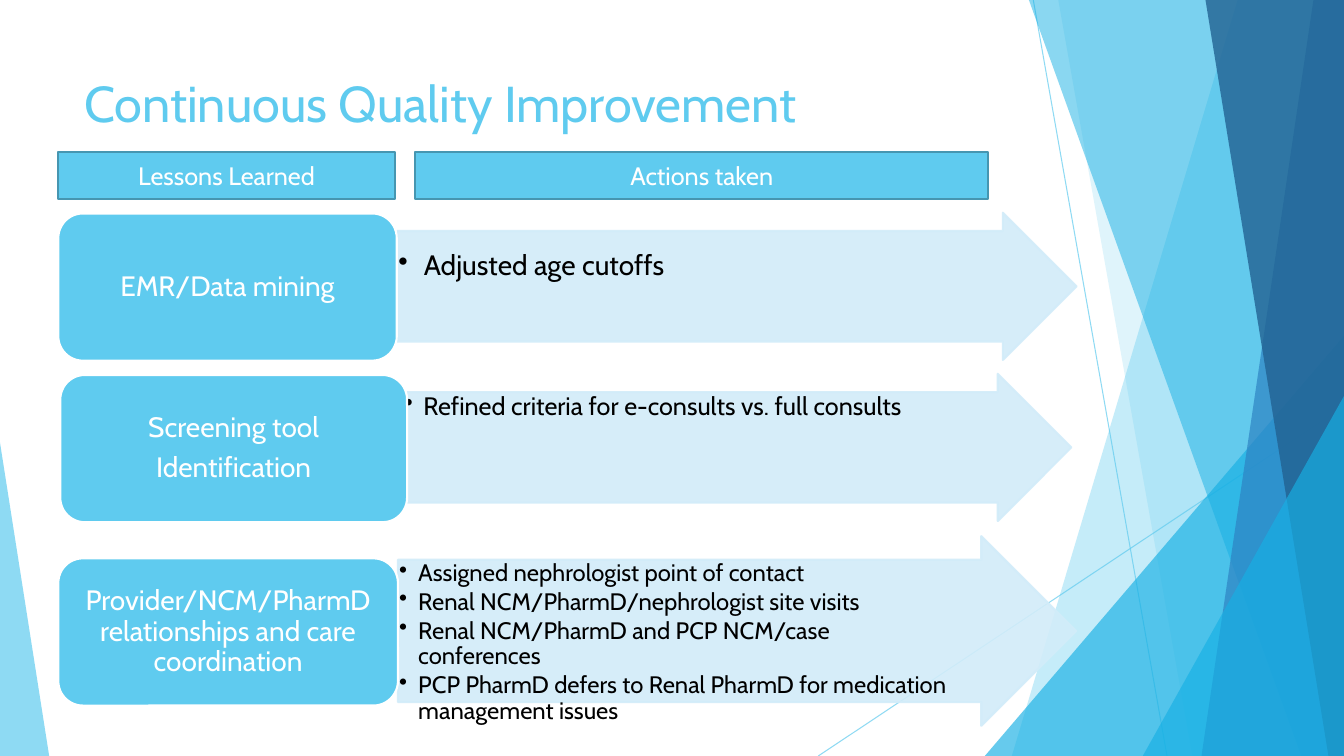
from lxml.etree import SubElement
from pptx import Presentation
from pptx.dml.color import RGBColor
from pptx.enum.shapes import MSO_CONNECTOR, MSO_SHAPE
from pptx.enum.text import MSO_ANCHOR, PP_ALIGN
from pptx.oxml.ns import qn
from pptx.util import Cm, Pt

HUES = {
    "sky": "5FCBEF", "cyan": "17B0E4", "blue": "2E83C3", "navy": "226292",
    "pale": "D2ECF9", "edge": "4696B1", "white": "FFFFFF", "black": "000000",
}
WIDE, HIGH = 33.87, 19.05


def paint(shape, fill, line=None, alpha=100):
    """Set fill, outline and opacity (percent), without a shadow."""
    shape.shadow.inherit = False
    shape.fill.solid()
    shape.fill.fore_color.rgb = RGBColor.from_string(HUES[fill])
    if line:
        shape.line.color.rgb = RGBColor.from_string(HUES[line])
        shape.line.width = Pt(1.5)
    else:
        shape.line.fill.background()
    if alpha < 100:
        for hue in shape._element.iter(qn("a:srgbClr")):
            SubElement(hue, qn("a:alpha"), val=str(alpha * 1000))


def write(shape, text, size, hue, align, anchor, pads, after=None):
    """Fill the shape with text; pads are left, top, right, bottom in cm."""
    frame = shape.text_frame
    frame.word_wrap = True
    frame.vertical_anchor = anchor
    frame.margin_left, frame.margin_top, frame.margin_right, frame.margin_bottom = map(Cm, pads)
    frame.text = text
    for para in frame.paragraphs:
        para.alignment = align
        if after is not None:
            para.line_spacing = 0.9
            para.space_after = Pt(after * size)
        for run in para.runs:
            run.font.name = "Cabin"
            run.font.size = Pt(size)
            run.font.color.rgb = RGBColor.from_string(HUES[hue])


deck = Presentation()
deck.slide_width, deck.slide_height = Cm(WIDE), Cm(HIGH)
slide = deck.slides.add_slide(deck.slide_layouts[6])
shapes = slide.shapes

# Thin rays behind the facets
for ends in [(26.04, 0, 29.41, HIGH), (WIDE, 10.24, 20.62, HIGH)]:
    ray = shapes.add_connector(MSO_CONNECTOR.STRAIGHT, *map(Cm, ends))
    ray.line.color.rgb = RGBColor.from_string(HUES["sky"])
    ray.line.width = Pt(0.75)
    for hue in ray._element.iter(qn("a:srgbClr")):
        SubElement(hue, qn("a:alpha"), val="70000")
    SubElement(ray._element.spPr, qn("a:effectLst"))

# Facets reach the right edge: a panel has top x and foot x, a wedge left x and top y
facets = [
    ("panel", 31.19, 25.5, "sky", 36),
    ("panel", 26.67, 30.05, "sky", 20),
    ("wedge", 24.82, 8.46, "cyan", 66),
    ("panel", 25.93, 32.79, "cyan", 50),
    ("panel", 33.1, 30.28, "blue", 70),
    ("panel", 30.38, 33.48, "navy", 80),
    ("wedge", 28.8, 9.98, "cyan", 66),
]
for kind, start, end, hue, alpha in facets:
    if kind == "panel":
        pen = shapes.build_freeform(Cm(start), 0)
        corners = [(WIDE, 0), (WIDE, HIGH), (end, HIGH)]
        pen.add_line_segments([(Cm(x), Cm(y)) for x, y in corners], close=True)
        facet = pen.convert_to_shape()
    else:
        facet = shapes.add_shape(MSO_SHAPE.ISOSCELES_TRIANGLE, Cm(start), Cm(end),
                                 Cm(WIDE - start), Cm(HIGH - end))
        facet.adjustments[0] = 1
    paint(facet, hue, alpha=alpha)

corner = shapes.add_shape(MSO_SHAPE.ISOSCELES_TRIANGLE, 0, Cm(11.15), Cm(1.24), Cm(7.9))
corner.adjustments[0] = 0
paint(corner, "sky", alpha=70)

title = shapes.add_textbox(Cm(1.88), Cm(1.7), Cm(23.88), Cm(3.66))
write(title, "Continuous Quality Improvement", 36, "sky", PP_ALIGN.LEFT,
      MSO_ANCHOR.TOP, (0.25, 0.13, 0.25, 0.13))

# Each row: lesson, its box (left, top, width), actions, their arrow
# (left, top, width, height), text size, bullet indent, top pad
rows = [
    ("EMR/Data mining", (1.47, 5.38, 8.53),
     ["Adjusted age cutoffs"], (10.01, 5.36, 17.12, 3.71), 20, 0.64, 0.5),
    ("Screening tool\nIdentification", (1.52, 9.45, 8.74),
     ["Refined criteria for e-consults vs. full consults"],
     (10.16, 9.42, 16.84, 3.71), 18, 0.48, 0.03),
    ("Provider/NCM/PharmD relationships and care coordination", (1.47, 14.07, 8.56),
     ["Assigned nephrologist point of contact",
      "Renal NCM/PharmD/nephrologist site visits",
      "Renal NCM/PharmD and PCP NCM/case conferences",
      "PCP PharmD defers to Renal PharmD for medication management issues"],
     (10.03, 13.51, 17.09, 4.78), 17, 0.48, 0.03),
]
for lesson, place, actions, span, size, hang, pad in rows:
    arrow = shapes.add_shape(MSO_SHAPE.RIGHT_ARROW, *map(Cm, span))
    arrow.adjustments[0], arrow.adjustments[1] = 0.75, 0.5
    paint(arrow, "pale", "pale", 90)
    write(arrow, "\n".join(actions), size, "black", PP_ALIGN.LEFT,
          MSO_ANCHOR.TOP, (0.03, pad, span[3] / 4, 0.03), 0.13)
    for para in arrow.text_frame.paragraphs:
        props = para._p.get_or_add_pPr()
        props.set("marL", str(Cm(hang)))
        props.set("indent", str(-Cm(hang)))
        SubElement(props, qn("a:buChar"), char="•")

    box = shapes.add_shape(MSO_SHAPE.ROUNDED_RECTANGLE, *map(Cm, place), Cm(3.71))
    paint(box, "sky", "white")
    write(box, lesson, 20, "white", PP_ALIGN.CENTER, MSO_ANCHOR.MIDDLE,
          (0.2, 0.1, 0.2, 0.1), 0.35)

for label, left, width in [("Lessons Learned", 1.47, 8.48), ("Actions taken", 10.46, 14.45)]:
    head = shapes.add_shape(MSO_SHAPE.RECTANGLE, Cm(left), Cm(3.84), Cm(width), Cm(1.17))
    paint(head, "sky", "edge")
    write(head, label, 18, "white", PP_ALIGN.CENTER, MSO_ANCHOR.MIDDLE,
          (0.25, 0.13, 0.25, 0.13))

deck.save("out.pptx")
